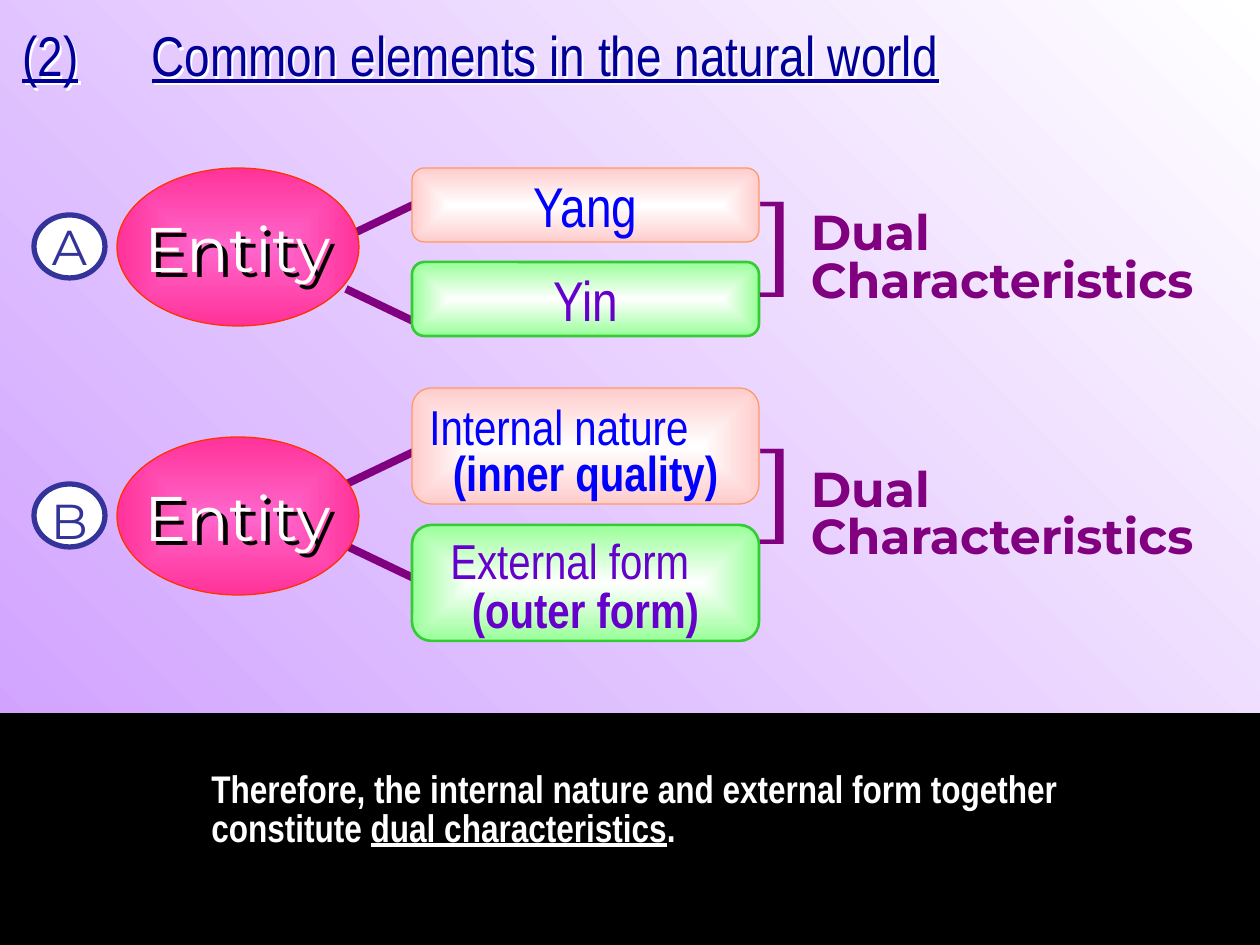
import pptx
import pptx.util
import pptx.dml.color
import pptx.enum.shapes
import pptx.enum.text
import pptx.oxml
import pptx.oxml.ns

SHAPE = pptx.enum.shapes.MSO_SHAPE
ALIGN = pptx.enum.text.PP_ALIGN
ANCHOR = pptx.enum.text.MSO_ANCHOR

# Content: top and height are those of the upper box in each row
HEADING = ("(2)", "Common elements in the natural world")
ROWS = [
    dict(letter="A", top=168, height=74, gap=20, entity_top=168, label_top=174,
         bracket_top=199, line_outer=194, line_inner=237, letter_spacing=1.0,
         boxes=[("Yang", None, 0), ("Yin", None, 0)]),
    dict(letter="B", top=388, height=116, gap=21, entity_top=437, label_top=431,
         bracket_top=446, line_outer=446, line_inner=489, letter_spacing=1.15,
         boxes=[("Internal nature", "(inner quality)", 417),
                ("External form", "(outer form)", 438)]),
]
ENTITY = "Entity"
LABEL = ["Dual", "Characteristics"]
CONCLUSION = [("Therefore, the internal nature and external form together constitute ", False),
              ("dual characteristics", True), (".", False)]

THEME = dict(
    narrow="Arial Narrow", round="Montserrat", serif="TeX Gyre Pagella",
    title=32, box=32, detail=28, label=28, entity=36, bracket=54, conclusion=22,
    navy="000099", purple="800080", indigo="333399", white="FFFFFF", black="000000",
    lilac="CC99FF", entity_fill=("FF66CC", "FF3399"), entity_line="FF3300",
    boxes=[dict(fill=("FFFFFF", "FFCCCC"), line="FF9966", width=0.75, text="0000FF"),
           dict(fill=("FFFFFF", "99FF99"), line="33CC33", width=1.5, text="6600CC")],
)


def px(value):
    return pptx.util.Emu(round(value * 914400 / 126))


def rgb(value):
    return pptx.dml.color.RGBColor.from_string(value)


def set_gradient(fill, colors, angle=None):
    """Linear gradient with an angle, or one from the centre outwards."""
    fill.gradient()
    for stop, color in zip(fill.gradient_stops, colors):
        stop.color.rgb = rgb(color)
    if angle is not None:
        fill.gradient_angle = angle
        return
    for linear in fill._fill._gradFill.findall(pptx.oxml.ns.qn("a:lin")):
        linear.getparent().replace(linear, pptx.oxml.parse_xml(
            f'<a:path {pptx.oxml.ns.nsdecls("a")} path="shape">'
            '<a:fillToRect l="50000" t="50000" r="50000" b="50000"/></a:path>'))


def set_effects(shape, shadow=None, distance=0):
    """Empty effect list, or a diagonal shadow for the text of an unfilled shape."""
    properties = shape._element.spPr
    for effects in properties.findall(pptx.oxml.ns.qn("a:effectLst")):
        properties.remove(effects)
    inner = "" if shadow is None else (
        f'<a:outerShdw dist="{px(distance)}" dir="2700000" algn="ctr" rotWithShape="0">'
        f'<a:srgbClr val="{shadow}"/></a:outerShdw>')
    properties.append(pptx.oxml.parse_xml(
        f'<a:effectLst {pptx.oxml.ns.nsdecls("a")}>{inner}</a:effectLst>'))


def write_text(shape, paragraphs, *, font, size, color, bold=False, align=ALIGN.LEFT,
               spacing=1.0, anchor=ANCHOR.MIDDLE, wrap=False, inset_top=6):
    """Each paragraph is a list of (text, underlined) runs."""
    frame = shape.text_frame
    frame.auto_size = pptx.enum.text.MSO_AUTO_SIZE.NONE
    frame.word_wrap = wrap
    frame.vertical_anchor = anchor
    frame.margin_top = px(inset_top)
    for index, runs in enumerate(paragraphs):
        paragraph = frame.add_paragraph() if index else frame.paragraphs[0]
        paragraph.alignment = align
        paragraph.line_spacing = spacing
        for text, underlined in runs:
            run = paragraph.add_run()
            run.text = text
            run.font.name = font
            run.font.size = pptx.util.Pt(size)
            run.font.bold = bold
            run.font.underline = underlined
            run.font.color.rgb = rgb(color)


def plain(*lines):
    return [[(line, False)] for line in lines]


def add_shape(slide, kind, box, fill=None, line=None, width=0.75):
    shape = slide.shapes.add_shape(kind, *map(px, box))
    shape.shadow.inherit = False
    if fill is None:
        shape.fill.background()
    elif isinstance(fill, tuple):
        set_gradient(shape.fill, fill)
    else:
        shape.fill.solid()
        shape.fill.fore_color.rgb = rgb(fill)
    if line is None:
        shape.line.fill.background()
    else:
        shape.line.color.rgb = rgb(line)
        shape.line.width = pptx.util.Pt(width)
    return shape


def add_text(slide, box, paragraphs, **text_format):
    shape = slide.shapes.add_textbox(*map(px, box))
    write_text(shape, paragraphs, anchor=ANCHOR.TOP, **text_format)
    return shape


def add_heading(slide):
    number, heading = HEADING
    text_format = dict(font=THEME["narrow"], size=THEME["title"], color=THEME["navy"], wrap=True)
    title = slide.shapes.title
    title.left, title.top, title.width, title.height = map(px, (66, 15, 933, 79))
    write_text(title, [[(heading, True)]], align=ALIGN.CENTER, anchor=ANCHOR.TOP, **text_format)
    title.text_frame.margin_left = px(38)
    number_box = add_text(slide, (10, 15, 97, 79), [[(number, True)]], **text_format)
    for shape in (title, number_box):
        set_effects(shape, THEME["white"], 3)


def add_row(slide, row):
    # Lines from the entity, their ends covered by the shapes in front
    middle = row["line_inner"] + 26
    for inner, outer in ((row["line_inner"], row["line_outer"]),
                         (2 * middle - row["line_inner"], 2 * middle - row["line_outer"])):
        start, end = (346, 436) if row["letter"] == "A" else (336, 426)
        line = slide.shapes.add_connector(pptx.enum.shapes.MSO_CONNECTOR.STRAIGHT,
                                          px(start), px(inner), px(end), px(outer))
        line.line.color.rgb = rgb(THEME["purple"])
        line.line.width = pptx.util.Pt(4.5)
        set_effects(line)

    # Pair of boxes
    for index, (name, detail, name_left) in enumerate(row["boxes"]):
        style = THEME["boxes"][index]
        top = row["top"] + index * (row["height"] + row["gap"])
        box = add_shape(slide, SHAPE.ROUNDED_RECTANGLE, (412, top, 347, row["height"]),
                        style["fill"], style["line"], style["width"])
        text_format = dict(font=THEME["narrow"], color=style["text"])
        if detail is None:
            write_text(box, plain(name), size=THEME["box"], align=ALIGN.CENTER, **text_format)
        else:
            write_text(box, plain(detail), size=THEME["detail"], bold=True, align=ALIGN.CENTER,
                       spacing=0.75, inset_top=70, **text_format)
            add_text(slide, (name_left, top + 2 - 2 * index, 336, 72), plain(name),
                     size=THEME["detail"], wrap=True, **text_format)

    # Letter
    circle = add_shape(slide, SHAPE.OVAL, (34, row["entity_top"] + 47, 71, 63),
                       THEME["white"], THEME["indigo"], 3)
    write_text(circle, plain(row["letter"]), font=THEME["round"], size=THEME["label"],
               color=THEME["indigo"], align=ALIGN.CENTER, spacing=row["letter_spacing"])

    # Entity, with shadowed text on an unfilled oval
    oval = (117, row["entity_top"], 242, 158)
    add_shape(slide, SHAPE.OVAL, oval, THEME["entity_fill"], THEME["entity_line"])
    caption = add_shape(slide, SHAPE.OVAL, oval)
    write_text(caption, plain(ENTITY), font=THEME["round"], size=THEME["entity"],
               color=THEME["white"], align=ALIGN.CENTER)
    set_effects(caption, THEME["black"], 7)

    # Bracket and its label
    add_text(slide, (761, row["bracket_top"], 26, 105), plain("]"), font=THEME["serif"],
             size=THEME["bracket"], color=THEME["purple"], bold=True, align=ALIGN.CENTER,
             spacing=0.75)
    label = add_shape(slide, SHAPE.ROUNDED_RECTANGLE, (790, row["label_top"], 420, 173))
    write_text(label, plain(*LABEL), font=THEME["round"], size=THEME["label"],
               color=THEME["purple"], bold=True, spacing=0.8)


def main():
    presentation = pptx.Presentation()
    presentation.slide_width, presentation.slide_height = px(1260), px(945)
    slide = presentation.slides.add_slide(presentation.slide_layouts[5])
    set_gradient(slide.background.fill, (THEME["lilac"], THEME["white"]), angle=45)

    # Conclusion band
    add_shape(slide, SHAPE.RECTANGLE, (0, 714, 1260, 231), THEME["black"], THEME["black"])
    add_text(slide, (199, 766, 882, 91), [CONCLUSION], font=THEME["narrow"],
             size=THEME["conclusion"], color=THEME["white"], bold=True, spacing=0.85, wrap=True)

    for row in ROWS:
        add_row(slide, row)
    add_heading(slide)
    presentation.save("out.pptx")


if __name__ == "__main__":
    main()
